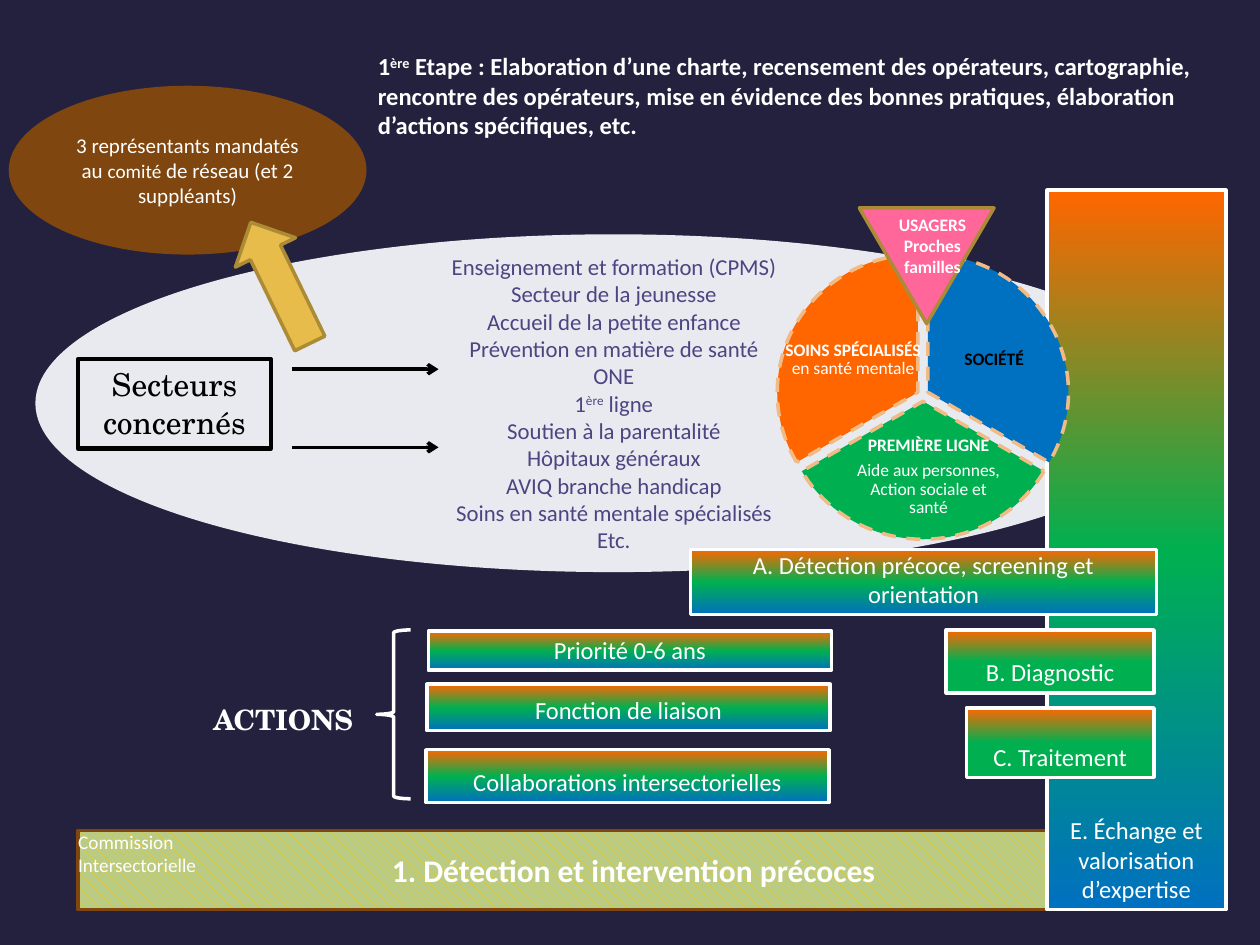
from dataclasses import dataclass

from lxml import etree
from pptx import Presentation
from pptx import util as u
from pptx.dml.color import RGBColor
from pptx.enum import dml, shapes, text
from pptx.oxml.ns import qn


@dataclass(frozen=True)
class Theme:
    """Colours, fonts and type sizes of the slide."""
    night: str = "24213E"
    white: str = "FFFFFF"
    black: str = "000000"
    mist: str = "E9EAF0"
    violet: str = "4B4582"
    brown: str = "7F460F"
    gold: str = "E8BC4A"
    dark_gold: str = "AC8B37"
    amber: str = "FFC000"
    olive: str = "B8CC85"
    peach: str = "F1BB86"
    pink: str = "FF6699"
    blue: str = "0070C0"
    green: str = "00B050"
    orange: str = "FF6600"
    sans: str = "Calibri"
    serif: str = "TeX Gyre Schola"
    heading: int = 18
    actions: int = 16
    body: int = 14
    sectors: int = 13
    mandate: int = 12
    small: int = 11
    wheel: int = 10


T = Theme()
LEFT, CENTER, RIGHT = text.PP_ALIGN.LEFT, text.PP_ALIGN.CENTER, text.PP_ALIGN.RIGHT
TOP, MIDDLE, BOTTOM = (text.MSO_ANCHOR.TOP, text.MSO_ANCHOR.MIDDLE,
                       text.MSO_ANCHOR.BOTTOM)
KIND = shapes.MSO_SHAPE
FULL = [(0, T.blue), (50, T.green), (100, T.orange)]
HALF = FULL[1:]
SUPER = {"baseline": 30}

STEP = [[("1", {}), ("ère", SUPER),
         (" Etape : Elaboration d’une charte, recensement des opérateurs, cartographie, "
          "rencontre des opérateurs, mise en évidence des bonnes pratiques, élaboration "
          "d’actions spécifiques, etc.", {})]]
SECTORS = [
    "Enseignement et formation (CPMS)", "Secteur de la jeunesse",
    "Accueil de la petite enfance", "Prévention en matière de santé", "ONE",
    [("1", {}), ("ère", SUPER), (" ligne", {})],
    "Soutien à la parentalité", "Hôpitaux généraux", "AVIQ branche handicap",
    "Soins en santé mentale spécialisés", "Etc.",
]
MANDATE = [[("3 représentants mandatés au ", {}), ("comité", {"size": T.small}),
            (" de réseau (et 2 suppléants)", {})]]
ACTIONS = [
    ("Collaborations intersectorielles", (243.4, 428.4, 230.4, 30.2)),
    ("Fonction de liaison", (244, 391, 230.4, 26.6)),
    ("Priorité 0-6 ans", (244.8, 360.7, 230.4, 22.3)),
]
FUNCTIONS = [
    ("E. Échange et valorisation d’expertise", (598.3, 108.7, 102.2, 411.1), FULL),
    ("A. Détection précoce, screening et orientation", (394.6, 313.9, 266.4, 37.4), FULL),
    ("B. Diagnostic", (540.7, 360, 118.8, 36), HALF),
    ("C. Traitement", (552.2, 404.6, 107.3, 39.6), HALF),
]
WHEEL = (447.1, 145.4, 160.6, 157.7)
WHEEL_GAP = 2.9
WEDGES = [
    (["SOCIÉTÉ"], T.blue, T.black, (1, 0), (270, 30), (539.3, 182.2, 57.6, 46.8)),
    (["PREMIÈRE LIGNE", [("Aide aux personnes, Action sociale et santé", {"bold": False})]],
     T.green, T.white, (0, 1.75), (30, 150), (487.4, 252, 86.4, 41)),
    ([[("SOINS SPÉCIALISÉS ", {}), ("en santé mentale", {"bold": False})]],
     T.orange, T.white, (-1, 0), (150, 270), (447.1, 182.2, 80.6, 46.8)),
]
ARROW_SPAN = (167, 250.6)
ARROW_ROWS = (255.6, 211)


def rgb(code):
    """Turn a hex code into a colour."""
    return RGBColor.from_string(code)


def points(values):
    """Turn numbers into point lengths."""
    return [u.Pt(value) for value in values]


def write(shape, paragraphs, size=T.body, color=T.white, font=T.sans, bold=False,
          align=CENTER, anchor=TOP, insets=(7.2, 3.6, 7.2, 3.6), spacing=None, after=0):
    """Fill a shape with formatted paragraphs."""
    frame = shape.text_frame
    frame.word_wrap = True
    frame.vertical_anchor = anchor
    (frame.margin_left, frame.margin_top,
     frame.margin_right, frame.margin_bottom) = points(insets)
    for index, content in enumerate(paragraphs):
        paragraph = frame.paragraphs[0] if index == 0 else frame.add_paragraph()
        paragraph.alignment = align
        paragraph.line_spacing = spacing
        paragraph.space_after = u.Pt(after)
        for words, changes in [(content, {})] if isinstance(content, str) else content:
            run = paragraph.add_run()
            run.text = words
            run.font.name = font
            run.font.size = u.Pt(changes.get("size", size))
            run.font.bold = changes.get("bold", bold)
            run.font.color.rgb = rgb(color)
            if "baseline" in changes:
                run.font._element.set("baseline", str(changes["baseline"] * 1000))


def paint_gradient(fill, holder, stops):
    """Give a shape a vertical gradient running upwards."""
    fill.gradient()
    fill.gradient_angle = 90
    stop_list = holder.find(".//" + qn("a:gsLst"))
    for old in list(stop_list):
        stop_list.remove(old)
    for position, color in stops:
        stop = etree.SubElement(stop_list, qn("a:gs"), pos=str(position * 1000))
        etree.SubElement(stop, qn("a:srgbClr"), val=color)


def draw(slide, kind, place, fill=None, line=None, width=2, rotation=0):
    """Add a preset shape with a plain, gradient or empty fill."""
    shape = slide.shapes.add_shape(kind, *points(place))
    shape.shadow.inherit = False
    shape.rotation = rotation
    if fill is None:
        shape.fill.background()
    elif isinstance(fill, list):
        paint_gradient(shape.fill, shape._element.spPr, fill)
    else:
        shape.fill.solid()
        shape.fill.fore_color.rgb = rgb(fill)
    if line:
        shape.line.color.rgb = rgb(line)
        shape.line.width = u.Pt(width)
    else:
        shape.line.fill.background()
    return shape


def label(slide, place, paragraphs, **style):
    """Add a text box."""
    box = slide.shapes.add_textbox(*points(place))
    write(box, paragraphs, **style)
    return box


def draw_arrow(slide, row):
    """Add a horizontal arrow towards the list of sectors."""
    start, end = ARROW_SPAN
    arrow = slide.shapes.add_connector(shapes.MSO_CONNECTOR.STRAIGHT,
                                       *points((start, row, end, row)))
    arrow.line.color.rgb = rgb(T.black)
    arrow.line.width = u.Pt(2)
    etree.SubElement(arrow.line._get_or_add_ln(), qn("a:tailEnd"), type="arrow")
    etree.SubElement(arrow._element.spPr, qn("a:effectLst"))


def draw_wedge(slide, paragraphs, fill, color, shift, angles, place):
    """Add one sector of the wheel and its label."""
    left, top, width, height = WHEEL
    wedge = draw(slide, KIND.PIE, (left + shift[0] * WHEEL_GAP, top + shift[1] * WHEEL_GAP,
                                   width, height), fill, T.peach)
    wedge.line.dash_style = dml.MSO_LINE.DASH
    for index, angle in enumerate(angles):
        wedge.adjustments[index] = angle * 0.6
    label(slide, place, paragraphs, size=T.wheel, color=color, bold=True, anchor=MIDDLE,
          insets=(1.44,) * 4, spacing=0.9, after=3.5)


def main():
    """Build the slide and save it."""
    deck = Presentation()
    deck.slide_width, deck.slide_height = points((720, 540))
    slide = deck.slides.add_slide(deck.slide_layouts[6])
    slide.background.fill.solid()
    slide.background.fill.fore_color.rgb = rgb(T.night)

    label(slide, (208.8, 25.9, 486.7, 59.8), STEP, bold=True, align=LEFT)
    detection = draw(slide, KIND.RECTANGLE, (44.6, 474.5, 635, 45.4), line=T.brown)
    detection.fill.patterned()
    detection.fill.pattern = dml.MSO_PATTERN.WIDE_DOWNWARD_DIAGONAL
    detection.fill.fore_color.rgb = rgb(T.amber)
    detection.fill.back_color.rgb = rgb(T.olive)
    write(detection, ["1. Détection et intervention précoces"], size=T.heading, bold=True,
          anchor=MIDDLE)
    commission = label(slide, (68.4, 450.7, 26.6, 74.2), ["Commission Intersectorielle"],
                       size=T.small, align=LEFT, insets=(0,) * 4)
    commission.rotation = 90
    commission.text_frame._txBody.bodyPr.set("vert", "vert270")

    for words, place in ACTIONS:
        write(draw(slide, KIND.RECTANGLE, place, FULL, T.white), [words], anchor=BOTTOM)
    write(draw(slide, KIND.OVAL, (20.2, 133.9, 661, 193), T.mist), SECTORS,
          size=T.sectors, color=T.violet, anchor=MIDDLE)
    for words, place, stops in FUNCTIONS:
        write(draw(slide, KIND.RECTANGLE, place, stops, T.white), [words], anchor=BOTTOM)

    write(draw(slide, KIND.RECTANGLE, (44.6, 205.2, 110.2, 51.1), None, T.black, 2.5),
          ["Secteurs concernés"], size=T.heading, color=T.black, font=T.serif)
    for row in ARROW_ROWS:
        draw_arrow(slide, row)
    write(draw(slide, KIND.OVAL, (5, 49, 204.5, 96.5), T.brown), MANDATE,
          size=T.mandate, anchor=MIDDLE)
    draw(slide, KIND.LEFT_ARROW, (121.7, 142.6, 77, 38.2), T.gold, T.dark_gold, rotation=64)

    for wedge in WEDGES:
        draw_wedge(slide, *wedge)
    draw(slide, KIND.LEFT_BRACE, (215.3, 360, 19.4, 96.5), None, T.white)
    label(slide, (106.6, 398.2, 102.2, 26.6), ["ACTIONS"], size=T.actions, font=T.serif,
          bold=True, align=RIGHT)
    draw(slide, KIND.ISOSCELES_TRIANGLE, (491, 118.8, 77, 66.2), T.pink, T.dark_gold,
         rotation=180)
    label(slide, (492.5, 118.8, 80.6, 43.9), ["USAGERS", "Proches", "familles"],
          size=T.wheel, bold=True)
    deck.save("out.pptx")


if __name__ == "__main__":
    main()
